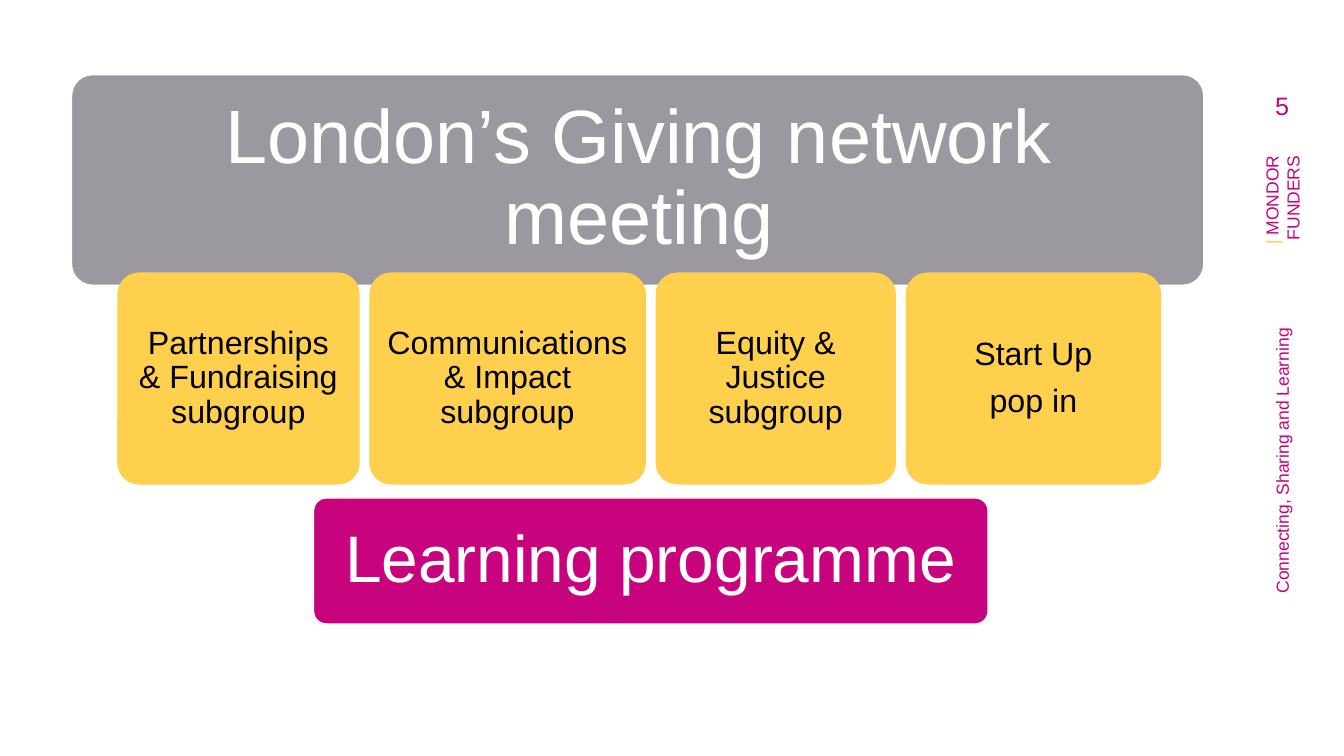
from pptx import Presentation
from pptx.dml.color import RGBColor
from pptx.enum import shapes, text
from pptx.util import Inches, Pt

GREY = RGBColor(0x9B, 0x99, 0x9F)
YELLOW = RGBColor(0xFF, 0xCF, 0x4E)
MAGENTA = RGBColor(0xC7, 0x04, 0x7E)
WHITE = RGBColor(0xFF, 0xFF, 0xFF)
BLACK = RGBColor(0, 0, 0)

# Content
MEETING = "London’s Giving network meeting"
LEARNING = "Learning programme"
GROUPS = [  # paragraphs, card width
    (["Partnerships & Fundraising subgroup"], 2.39),
    (["Communications & Impact subgroup"], 2.73),
    (["Equity & Justice subgroup"], 2.37),
    (["Start Up", "pop in"], 2.52),
]
ORGANISATION = [("| ", YELLOW), ("MONDOR FUNDERS", MAGENTA)]
STRAPLINE = [("Connecting, Sharing and Learning", MAGENTA)]
PAGE = [("5", MAGENTA)]

# Layout, in inches
BANNER = (0.71, 0.74, 11.23, 2.09)
BANNER_TEXT = (0.78, 0.8, 11.11, 1.96)
PROGRAMME = (3.11, 4.94, 6.69, 1.25)
CARD_LEFT, CARD_TOP, CARD_HEIGHT, CARD_GAP = 1.17, 2.71, 2.09, 0.11
MARGIN_CENTRE = 12.715


def write(shape, paragraphs, size, inset=0, align=text.PP_ALIGN.CENTER,
          line_spacing=None, space_before=0):
    """Fill a shape with paragraphs, each a list of (words, colour) runs."""
    frame = shape.text_frame
    frame.word_wrap = True
    frame.auto_size = text.MSO_AUTO_SIZE.NONE
    frame.vertical_anchor = text.MSO_ANCHOR.MIDDLE
    frame.margin_left = frame.margin_right = Inches(inset)
    frame.margin_top = frame.margin_bottom = Inches(inset)
    for index, runs in enumerate(paragraphs):
        paragraph = frame.add_paragraph() if index else frame.paragraphs[0]
        paragraph.alignment = align
        paragraph.line_spacing = line_spacing
        paragraph.space_before = Pt(space_before if index else 0)
        for words, colour in runs:
            run = paragraph.add_run()
            run.text = words
            run.font.name = "Arial"
            run.font.size = Pt(size)
            run.font.color.rgb = colour


def add_panel(slide, box, fill, outline):
    panel = slide.shapes.add_shape(
        shapes.MSO_SHAPE.ROUNDED_RECTANGLE, *map(Inches, box))
    panel.adjustments[0] = 0.1
    panel.shadow.inherit = False
    panel.fill.solid()
    panel.fill.fore_color.rgb = fill
    panel.line.color.rgb = outline
    panel.line.width = Pt(1)
    return panel


def add_margin_text(slide, runs, centre_y, width, height, size, align, rotation=0):
    label = slide.shapes.add_textbox(
        Inches(MARGIN_CENTRE - width / 2), Inches(centre_y - height / 2),
        Inches(width), Inches(height))
    label.rotation = rotation
    write(label, [runs], size, align=align)


def main():
    deck = Presentation()
    deck.slide_width, deck.slide_height = Inches(13.33), Inches(7.5)
    slide = deck.slides.add_slide(deck.slide_layouts[5])

    # Right margin
    right = text.PP_ALIGN.RIGHT
    add_margin_text(slide, ORGANISATION, 2.37, 1.65, 0.4, 12.5, right, 270)
    add_margin_text(slide, STRAPLINE, 4.94, 3.37, 0.4, 12.5, right, 270)
    add_margin_text(slide, PAGE, 1.05, 0.39, 0.39, 18, text.PP_ALIGN.CENTER)

    # Banner with the slide title on top of it
    banner = add_panel(slide, BANNER, GREY, WHITE)
    title = slide.shapes.title
    title.left, title.top, title.width, title.height = map(Inches, BANNER_TEXT)
    write(title, [[(MEETING, WHITE)]], 54, inset=0.23, line_spacing=0.9)
    banner._element.addnext(title._element)

    # Learning programme
    programme = add_panel(slide, PROGRAMME, MAGENTA, WHITE)
    write(programme, [[(LEARNING, WHITE)]], 47, inset=0.2, line_spacing=0.9)

    # Subgroup cards
    left = CARD_LEFT
    for lines, width in GROUPS:
        card = add_panel(slide, (left, CARD_TOP, width, CARD_HEIGHT), YELLOW, YELLOW)
        write(card, [[(line, BLACK)] for line in lines], 23, inset=0.1,
              line_spacing=0.9, space_before=8.4)
        left += width + CARD_GAP

    deck.save("out.pptx")


if __name__ == "__main__":
    main()
